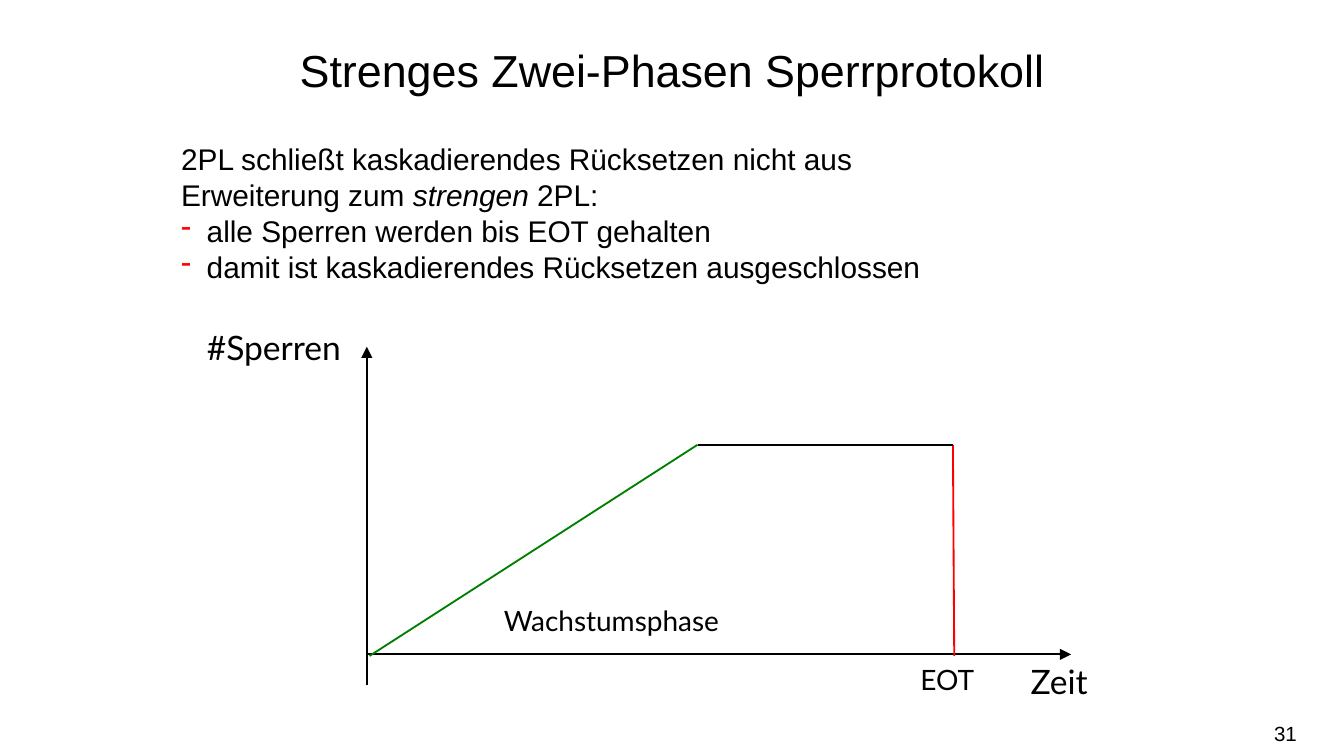
from dataclasses import dataclass

from lxml.etree import SubElement
from pptx import Presentation
from pptx.dml.color import RGBColor
from pptx.enum.shapes import MSO_CONNECTOR
from pptx.enum.text import MSO_ANCHOR, PP_ALIGN
from pptx.oxml.ns import qn
from pptx.slide import Slide
from pptx.text.text import TextFrame
from pptx.util import Pt


@dataclass(frozen=True)
class Theme:
    ink: str = "000000"
    growth: str = "008000"
    accent: str = "FF0000"
    text_font: str = "Arial"
    diagram_font: str = "Lato"
    title_size: float = 24
    body_size: float = 16
    axis_size: float = 18
    phase_size: float = 15
    number_size: float = 11
    line_width: float = 1


@dataclass(frozen=True)
class Box:
    left: float
    top: float
    width: float
    height: float


@dataclass(frozen=True)
class Label:
    wording: str
    box: Box
    size: float


@dataclass(frozen=True)
class Segment:
    start: tuple[float, float]
    end: tuple[float, float]
    color: str
    arrow: bool = False


@dataclass(frozen=True)
class Statement:
    phrases: tuple[str, ...]
    bulleted: bool = False


THEME = Theme()
ORIGIN_X, AXIS_Y = 196.5, 350.6
GROWTH_START = (198, 351.4)
LOCK_POINT = (373.7, 238.3)
HOLD_END = (510.5, 238.3)
RELEASE_END = (511.2, 351.4)

SEGMENTS = (
    Segment((ORIGIN_X, 367.2), (ORIGIN_X, 185.8), THEME.ink, True),
    Segment((ORIGIN_X, AXIS_Y), (573.8, AXIS_Y), THEME.ink, True),
    Segment(GROWTH_START, LOCK_POINT, THEME.growth),
    Segment(HOLD_END, RELEASE_END, THEME.accent),
    Segment(HOLD_END, LOCK_POINT, THEME.ink),
)
LABELS = (
    Label("#Sperren", Box(103.7, 171.4, 92.9, 28.8), THEME.axis_size),
    Label("Zeit", Box(545, 350.6, 58.3, 28.8), THEME.axis_size),
    Label("Wachstumsphase", Box(262.8, 319.7, 221.8, 25.2), THEME.phase_size),
    Label("EOT", Box(486, 351.4, 49.7, 25.2), THEME.phase_size),
)
STATEMENTS = (
    Statement(("2PL schließt kaskadierendes Rücksetzen nicht aus",)),
    Statement(("Erweiterung zum ", "strengen", " 2PL:")),
    Statement(("alle Sperren werden bis EOT gehalten",), True),
    Statement(("damit ist kaskadierendes Rücksetzen ausgeschlossen",), True),
)


def style(paragraph, family: str, size: float) -> None:
    paragraph.font.name = family
    paragraph.font.size = Pt(size)
    paragraph.font.color.rgb = RGBColor.from_string(THEME.ink)


def add_text_frame(slide: Slide, box: Box) -> TextFrame:
    frame = slide.shapes.add_textbox(
        Pt(box.left), Pt(box.top), Pt(box.width), Pt(box.height)
    ).text_frame
    frame.word_wrap = True
    return frame


def add_title(slide: Slide, wording: str) -> None:
    title = slide.shapes.title
    title.left, title.top, title.width, title.height = Pt(0), Pt(0), Pt(720), Pt(67.5)
    frame = title.text_frame
    frame.text = wording
    frame.vertical_anchor = MSO_ANCHOR.MIDDLE
    heading = frame.paragraphs[0]
    heading.alignment = PP_ALIGN.CENTER
    heading.line_spacing = 1.25
    style(heading, THEME.text_font, THEME.title_size)


def add_bullet(paragraph) -> None:
    properties = paragraph._p.get_or_add_pPr()
    indent = Pt(13.7)
    properties.set("marL", str(indent))
    properties.set("indent", str(-indent))
    color = SubElement(properties, qn("a:buClr"))
    SubElement(color, qn("a:srgbClr"), val=THEME.accent)
    SubElement(properties, qn("a:buChar"), char="-")


def add_statements(slide: Slide, box: Box) -> None:
    frame = add_text_frame(slide, box)
    for index, statement in enumerate(STATEMENTS):
        paragraph = frame.add_paragraph() if index else frame.paragraphs[0]
        if statement.bulleted:
            add_bullet(paragraph)
        style(paragraph, THEME.text_font, THEME.body_size)
        for position, wording in enumerate(statement.phrases):
            run = paragraph.add_run()
            run.text = wording
            if position == 1:
                run.font.italic = True


def add_label(slide: Slide, label: Label) -> None:
    frame = add_text_frame(slide, label.box)
    frame.text = label.wording
    style(frame.paragraphs[0], THEME.diagram_font, label.size)


def add_segment(slide: Slide, segment: Segment) -> None:
    connector = slide.shapes.add_connector(
        MSO_CONNECTOR.STRAIGHT, *map(Pt, segment.start + segment.end)
    )
    connector.line.color.rgb = RGBColor.from_string(segment.color)
    connector.line.width = Pt(THEME.line_width)
    if segment.arrow:
        SubElement(connector.line._get_or_add_ln(), qn("a:tailEnd"), type="triangle")
    SubElement(connector._element.spPr, qn("a:effectLst"))


def add_slide_number(slide: Slide, number: str, box: Box) -> None:
    frame = add_text_frame(slide, box)
    frame.margin_left = frame.margin_right = Pt(0)
    frame.vertical_anchor = MSO_ANCHOR.MIDDLE
    frame.text = number
    frame.paragraphs[0].alignment = PP_ALIGN.RIGHT
    style(frame.paragraphs[0], THEME.text_font, THEME.number_size)


def main() -> None:
    presentation = Presentation()
    presentation.slide_width, presentation.slide_height = Pt(720), Pt(405)
    slide = presentation.slides.add_slide(presentation.slide_layouts[5])
    add_title(slide, "Strenges Zwei-Phasen Sperrprotokoll")
    add_statements(slide, Box(90, 72, 540, 108))
    for segment in SEGMENTS:
        add_segment(slide, segment)
    for label in LABELS:
        add_label(slide, label)
    add_slide_number(slide, "31", Box(533.5, 382.3, 161.3, 21.6))
    presentation.save("out.pptx")


if __name__ == "__main__":
    main()
